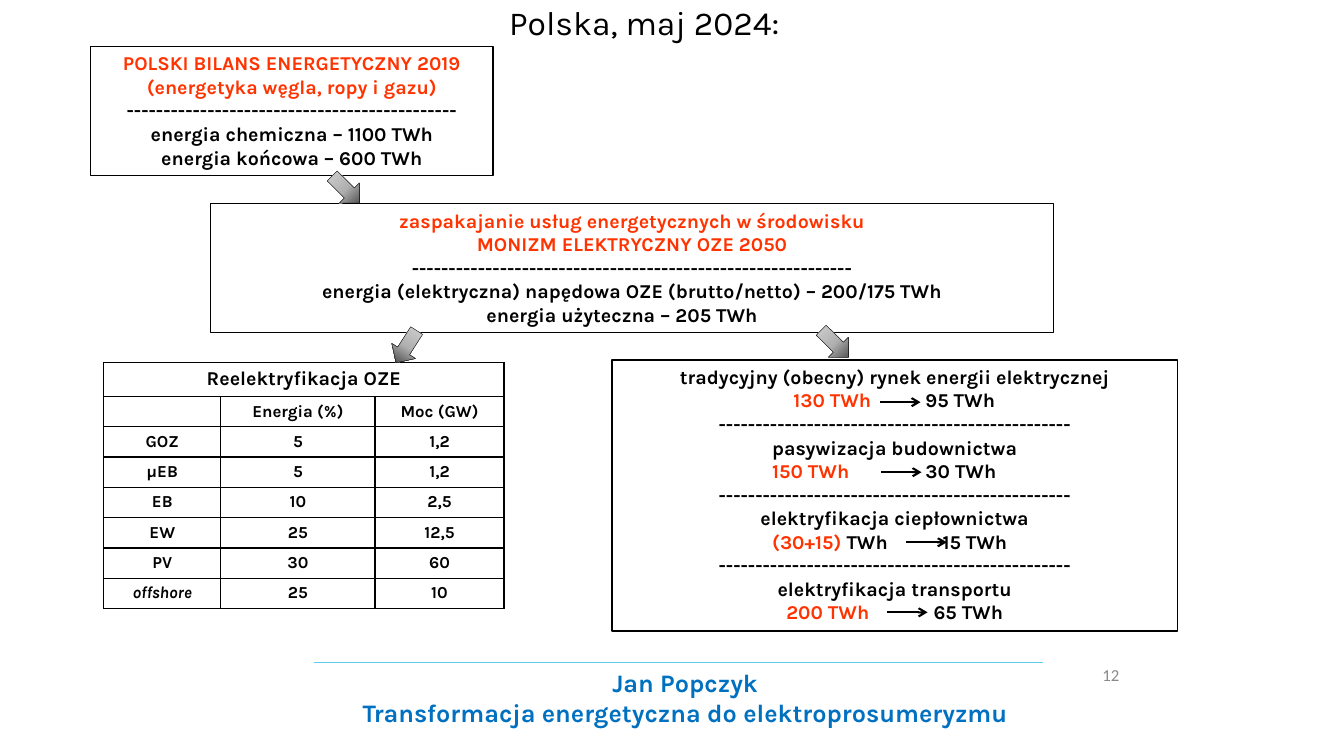
import copy

import lxml.etree
import pptx
import pptx.dml.color
import pptx.enum.shapes
import pptx.enum.text
import pptx.oxml.ns
import pptx.util

Inches = pptx.util.Inches
Pt = pptx.util.Pt
qn = pptx.oxml.ns.qn
ALIGN = pptx.enum.text.PP_ALIGN
ANCHOR = pptx.enum.text.MSO_ANCHOR
SHAPE = pptx.enum.shapes.MSO_SHAPE

COLORS = {
    "black": "000000", "red": "FF3300", "blue": "0070C0", "cyan": "5FCBEF",
    "gray": "898989", "light": "D9D9D9", "middle": "B0B0B0", "dark": "181818",
}


def rgb(name):
    return pptx.dml.color.RGBColor.from_string(COLORS[name])


class EnergySlide:
    """Holds the text style and the slide that the elements are added to."""

    def __init__(self, presentation):
        self.slide = presentation.slides.add_slide(presentation.slide_layouts[5])
        self.shapes = self.slide.shapes
        self.style = {"name": "Karla", "size": Pt(14), "bold": True, "italic": False}

    def fill_frame(self, frame, lines, align=ALIGN.CENTER, **changes):
        """Fill a frame; each line is a list of (text, color) runs."""
        for index, runs in enumerate(lines):
            paragraph = frame.paragraphs[0] if index == 0 else frame.add_paragraph()
            paragraph.alignment = align
            for text, color in runs:
                run = paragraph.add_run()
                run.text = text
                for attribute, value in {**self.style, **changes}.items():
                    setattr(run.font, attribute, value)
                run.font.color.rgb = rgb(color)

    def title(self, text, position):
        shape = self.shapes.title
        shape.left, shape.top, shape.width, shape.height = map(Inches, position)
        shape.text_frame.vertical_anchor = ANCHOR.TOP
        self.fill_frame(shape.text_frame, [[(text, "black")]], size=Pt(24), bold=False)

    def text(self, lines, position, align=ALIGN.CENTER, anchor=ANCHOR.TOP, **changes):
        frame = self.shapes.add_textbox(*map(Inches, position)).text_frame
        frame.word_wrap = True
        frame.vertical_anchor = anchor
        self.fill_frame(frame, lines, align, **changes)

    def box(self, lines, position, width=0.75):
        shape = self.shapes.add_shape(SHAPE.RECTANGLE, *map(Inches, position))
        shape.shadow.inherit = False
        shape.fill.background()
        shape.line.color.rgb = rgb("black")
        shape.line.width = Pt(width)
        shape.text_frame.vertical_anchor = ANCHOR.TOP
        shape.text_frame.word_wrap = True
        self.fill_frame(shape.text_frame, lines)
        return shape.text_frame

    def block_arrow(self, left, top, rotation):
        shape = self.shapes.add_shape(
            SHAPE.DOWN_ARROW, Inches(left), Inches(top), Inches(0.28), Inches(0.38))
        shape.rotation = rotation
        shape.shadow.inherit = False
        shape.line.color.rgb = rgb("black")
        shape.line.width = Pt(0.25)
        shape.fill.gradient()
        shape.fill.gradient_angle = 270
        stop_list = next(shape.element.iter(qn("a:gsLst")))
        stop_list.append(copy.deepcopy(stop_list[-1]))
        stops = zip(shape.fill.gradient_stops, (0, 0.5, 1), ("light", "middle", "dark"))
        for stop, place, color in stops:
            stop.position = place
            stop.color.rgb = rgb(color)

    def line(self, left, right, y, color, width, arrow=False):
        connector = self.shapes.add_connector(
            pptx.enum.shapes.MSO_CONNECTOR.STRAIGHT,
            Inches(left), Inches(y), Inches(right), Inches(y))
        connector.line.color.rgb = rgb(color)
        connector.line.width = Pt(width)
        properties = connector.element.find(qn("p:spPr"))
        if arrow:
            outline = properties.find(qn("a:ln"))
            lxml.etree.SubElement(outline, qn("a:tailEnd"), type="arrow")
        lxml.etree.SubElement(properties, qn("a:effectLst"))

    def table(self, rows, left, top, widths, heights):
        table = self.shapes.add_table(
            len(rows), len(widths), Inches(left), Inches(top),
            Inches(sum(widths)), Inches(sum(heights))).table
        table.first_row = table.horz_banding = False
        for column, width in zip(table.columns, widths):
            column.width = Inches(width)
        for row_index, values in enumerate(rows):
            table.rows[row_index].height = Inches(heights[row_index])
            for column_index, value in enumerate(values):
                cell = table.cell(row_index, column_index)
                self.border(cell)
                cell.fill.background()
                if value:
                    self.fill_frame(cell.text_frame, [[(value, "black")]],
                                    size=Pt(12 if row_index else 14),
                                    italic=value == "offshore")
                else:
                    paragraph = cell.text_frame.paragraphs[0]._p
                    lxml.etree.SubElement(paragraph, qn("a:endParaRPr"), sz="1200")
        table.cell(0, 0).merge(table.cell(0, len(widths) - 1))

    def border(self, cell):
        properties = cell._tc.get_or_add_tcPr()
        for side in ("a:lnL", "a:lnR", "a:lnT", "a:lnB"):
            outline = lxml.etree.SubElement(properties, qn(side), w=str(Pt(1)))
            fill = lxml.etree.SubElement(outline, qn("a:solidFill"))
            lxml.etree.SubElement(fill, qn("a:srgbClr"), val=COLORS["black"])


def set_tabs(paragraph, stops):
    """Left-align a paragraph on tab stops, given in inches from its frame."""
    paragraph.alignment = ALIGN.LEFT
    tab_list = lxml.etree.SubElement(paragraph._p.get_or_add_pPr(), qn("a:tabLst"))
    for stop in stops:
        lxml.etree.SubElement(tab_list, qn("a:tab"), pos=str(Inches(stop)), algn="l")


def add_market(page):
    left, top = 6.07, 3.57
    # heading, red value, its black unit, new value, text starts, arrow start
    sectors = [
        ("tradycyjny (obecny) rynek energii elektrycznej", "130 TWh", "", "95 TWh",
         (7.87, 9.18), 8.73),
        ("pasywizacja budownictwa", "150 TWh", "", "30 TWh", (7.66, 9.18), 8.74),
        ("elektryfikacja ciepłownictwa", "(30+15) ", "TWh", "15 TWh",
         (7.66, 9.35), 8.99),
        ("elektryfikacja transportu", "200 TWh", "", "65 TWh", (7.8, 9.26), 8.8),
    ]
    lines = []
    for heading, before, unit, after, _, _ in sectors:
        if lines:
            lines.append([("-" * 48, "black")])
        lines.append([(heading, "black")])
        lines.append([("\t" + before, "red"), (unit + "\t" + after, "black")])
    frame = page.box(lines, (left, top, 5.61, 2.69), 1)
    for index, (_, _, _, _, starts, arrow) in enumerate(sectors):
        set_tabs(frame.paragraphs[3 * index + 1], [x - left - 0.1 for x in starts])
        page.line(arrow, arrow + 0.4, 3.99 + 0.695 * index, "black", 1.5, arrow=True)


def main():
    presentation = pptx.Presentation()
    presentation.slide_width = Inches(13.33)
    presentation.slide_height = Inches(7.5)
    page = EnergySlide(presentation)

    page.text([[("Jan Popczyk", "blue")],
               [("Transformacja energetyczna do elektroprosumeryzmu", "blue")]],
              (3.24, 6.57, 7.11, 0.71), size=Pt(18))
    page.title("Polska, maj 2024:", (0.34, -0.03, 12.1, 0.5))
    page.line(3.11, 10.34, 6.57, "cyan", 1)
    page.text([[("12", "gray")]], (8.87, 6.49, 2.33, 0.4), ALIGN.RIGHT, ANCHOR.MIDDLE,
              name="Calibri", size=Pt(12), bold=False)

    page.box([[("POLSKI BILANS ENERGETYCZNY 2019", "red")],
              [("(energetyka węgla, ropy i gazu)", "red")],
              [("-" * 45, "black")],
              [("energia chemiczna – 1100 TWh", "black")],
              [("energia końcowa – 600 TWh", "black")]], (0.9, 0.46, 3.99, 1.28))
    balance = page.box(
        [[("zaspakajanie usług energetycznych w środowisku", "red")],
         [("MONIZM ELEKTRYCZNY OZE 2050", "red")],
         [("-" * 60, "black")],
         [("energia (elektryczna) napędowa OZE (brutto/netto) – 200/175 TWh", "black")],
         [("energia użyteczna – 205 TWh", "black")]], (2.09, 2.02, 8.36, 1.28))
    balance.paragraphs[-1]._p.get_or_add_pPr().set("marR", str(Inches(0.2)))
    add_market(page)

    page.table([("Reelektryfikacja OZE", "", ""),
                ("", "Energia (%)", "Moc (GW)"),
                ("GOZ", "5", "1,2"),
                ("μEB", "5", "1,2"),
                ("EB", "10", "2,5"),
                ("EW", "25", "12,5"),
                ("PV", "30", "60"),
                ("offshore", "25", "10")],
               1.03, 3.6, (1.16, 1.53, 1.28), [0.33] + [0.3] * 7)
    for left, top, rotation in ((3.89, 3.25, 32.6), (8.14, 3.22, 314.8),
                                (3.29, 1.69, 314.8)):
        page.block_arrow(left, top, rotation)
    presentation.save("out.pptx")


if __name__ == "__main__":
    main()
